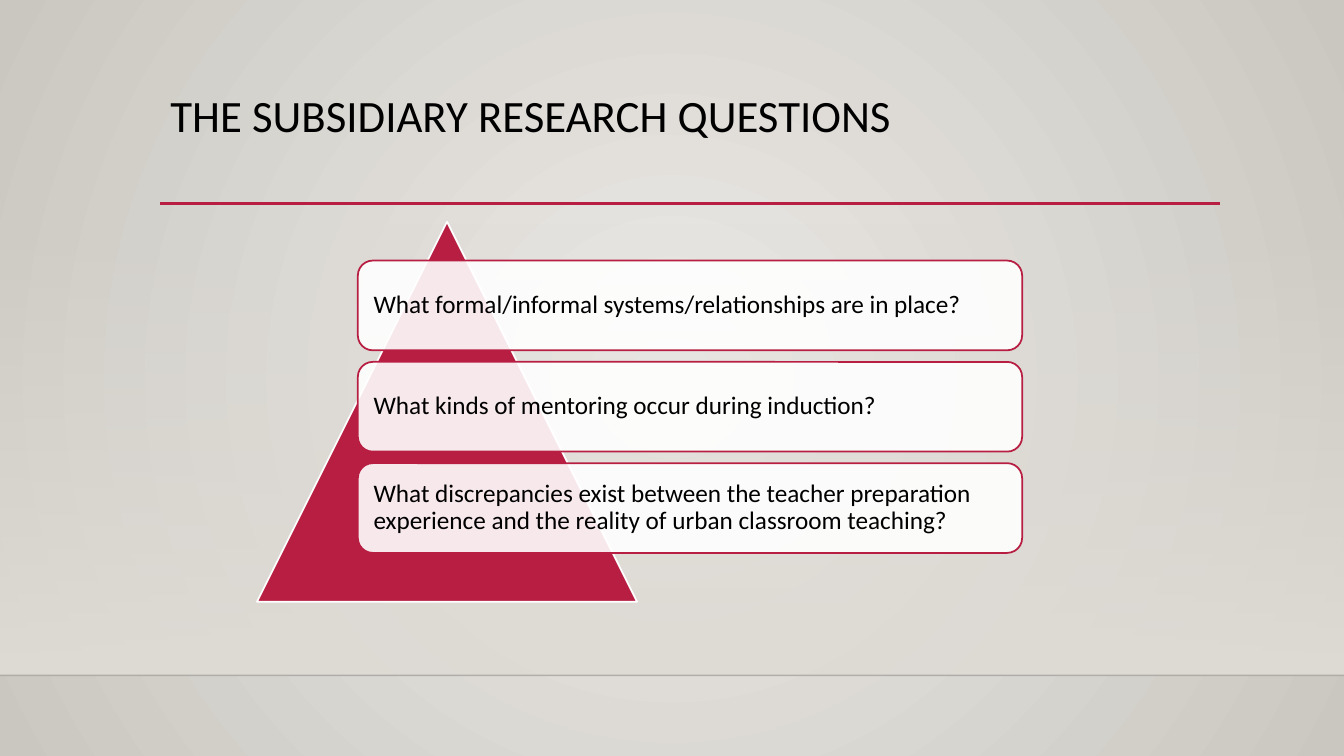
from lxml import etree
from pptx import Presentation
from pptx import util as u
from pptx.dml.color import RGBColor
from pptx.enum import shapes, text
from pptx.oxml import ns

RED = RGBColor(0xB7, 0x1E, 0x42)
WHITE = RGBColor(0xFF, 0xFF, 0xFF)
BLACK = RGBColor(0, 0, 0)
EDGE = RGBColor(0, 0, 1)
SAND = RGBColor(0xDF, 0xDB, 0xD5)
LIGHT = RGBColor(0xEC, 0xEA, 0xE7)
DARK = RGBColor(0xCA, 0xC7, 0xC1)

COLS, ROWS = 133.33, 75
CELL = u.Inches(0.1)


def cells(*nums):
    return [u.Emu(round(n * CELL)) for n in nums]


def assign(item, vals):
    for key, val in vals.items():
        setattr(item, key, val)


def fade(node, share):
    for color in node.iter(ns.qn("a:srgbClr")):
        etree.SubElement(color, ns.qn("a:alpha"), val=str(share * 1000))


class Page:
    font = {"name": "Calibri"}
    para = {"line_spacing": 0.9, "alignment": text.PP_ALIGN.LEFT}

    def __init__(self, deck):
        self.slide = deck.slides.add_slide(deck.slide_layouts[5])
        self.items = self.slide.shapes

    def blend(self, fill, *hues):
        fill.gradient()
        for stop, hue in zip(fill.gradient_stops, hues):
            stop.color.rgb = hue

    def back(self, *hues):
        self.blend(self.slide.background.fill, *hues)
        grad = self.slide.element.find(".//" + ns.qn("a:gradFill"))
        grad.remove(grad.find(ns.qn("a:lin")))
        ring = etree.SubElement(grad, ns.qn("a:path"))
        ring.set("path", "circle")
        sides = dict.fromkeys("ltrb", "50000")
        etree.SubElement(ring, ns.qn("a:fillToRect"), sides)

    def veil(self, box, hue):
        item = self.items.add_shape(shapes.MSO_SHAPE.RECTANGLE, *cells(*box))
        item.shadow.inherit = False
        item.line.fill.background()
        self.blend(item.fill, hue, hue)
        item.fill.gradient_angle = 270
        fade(item.element.find(".//" + ns.qn("a:gs")), 0)

    def rule(self, left, right, row, hue, width, share=100):
        item = self.items.add_connector(
            shapes.MSO_CONNECTOR.STRAIGHT, *cells(left, row, right, row))
        item.line.color.rgb = hue
        item.line.width = u.Pt(width)
        props = item.element.spPr
        if share < 100:
            fade(props, share)
        etree.SubElement(props, ns.qn("a:effectLst"))

    def label(self, frame, words, size, anchor, pads):
        assign(frame, {"word_wrap": True, "vertical_anchor": anchor,
                       "auto_size": text.MSO_AUTO_SIZE.NONE})
        for side, pad in zip(("left", "right", "top", "bottom"), cells(*pads)):
            setattr(frame, "margin_" + side, pad)
        frame.text = words
        line = frame.paragraphs[0]
        assign(line, self.para)
        assign(line.font, {**self.font, "size": u.Pt(size)})
        line.font.color.rgb = BLACK

    def title(self, box, words):
        item = self.items.title
        assign(item, dict(zip(("left", "top", "width", "height"), cells(*box))))
        self.label(item.text_frame, words, 32, text.MSO_ANCHOR.TOP,
                   (1, 1, 0.5, 0.5))

    def shape(self, kind, box, hue, edge, share=100):
        item = self.items.add_shape(kind, *cells(*box))
        item.shadow.inherit = False
        item.fill.solid()
        item.fill.fore_color.rgb = hue
        if share < 100:
            fade(item.element.spPr, share)
        item.line.color.rgb = edge
        item.line.width = u.Pt(1.25)
        return item

    def card(self, box, words):
        item = self.shape(shapes.MSO_SHAPE.ROUNDED_RECTANGLE, box, WHITE, RED, 90)
        self.label(item.text_frame, words, 18, text.MSO_ANCHOR.MIDDLE,
                   (1.13, 1.13, 1.13, 1.13))


def main():
    deck = Presentation()
    assign(deck, dict(zip(("slide_width", "slide_height"), cells(COLS, ROWS))))
    page = Page(deck)
    page.back(LIGHT, DARK)
    page.veil((0, 22.1, COLS, 44.9), SAND)
    page.rule(0, COLS, 67, EDGE, 1, 20)
    page.rule(15.9, 121, 20.2, RED, 2.5)
    page.title((15.9, 8.8, 105, 11.5), "THE SUBSIDIARY RESEARCH QUESTIONS")
    page.shape(shapes.MSO_SHAPE.ISOSCELES_TRIANGLE, (25.5, 22, 37.7, 37.7),
               RED, WHITE)
    asks = (
        "What formal/informal systems/relationships are in place?",
        "What kinds of mentoring occur during induction?",
        "What discrepancies exist between the teacher preparation experience "
        "and the reality of urban classroom teaching?",
    )
    for row, words in enumerate(asks):
        page.card((35.5, 25.85 + row * 10.05, 65.9, 8.9), words)
    deck.save("out.pptx")


if __name__ == "__main__":
    main()
